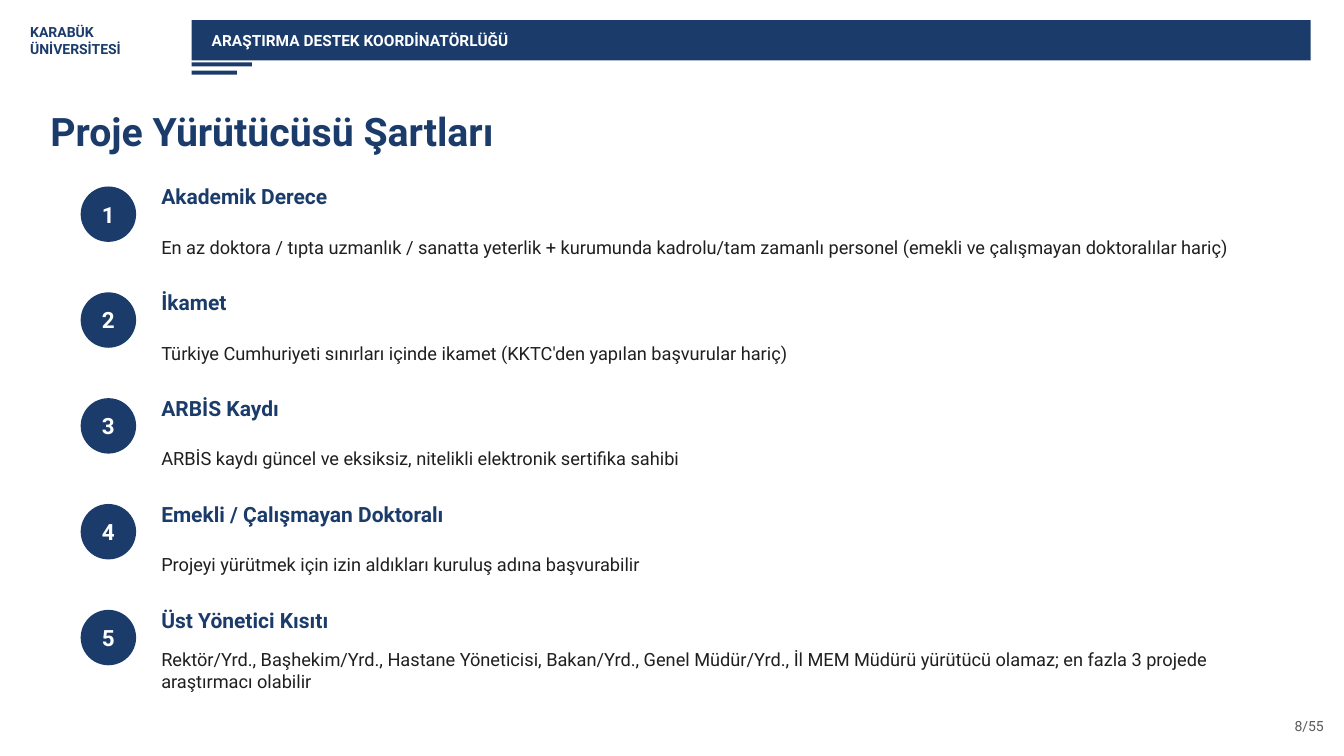
from pptx import Presentation
from pptx.dml.color import RGBColor
from pptx.enum.shapes import MSO_SHAPE
from pptx.enum.text import MSO_ANCHOR, MSO_AUTO_SIZE, PP_ALIGN
from pptx.util import Inches, Pt

FONT = "Roboto"
NAVY, WHITE, INK, GRAY = "1B3C6B", "FFFFFF", "1F1F1F", "595959"

CONDITIONS = [
    ("Akademik Derece",
     "En az doktora / tıpta uzmanlık / sanatta yeterlik + kurumunda kadrolu/tam zamanlı "
     "personel (emekli ve çalışmayan doktoralılar hariç)"),
    ("İkamet",
     "Türkiye Cumhuriyeti sınırları içinde ikamet (KKTC'den yapılan başvurular hariç)"),
    ("ARBİS Kaydı",
     "ARBİS kaydı güncel ve eksiksiz, nitelikli elektronik sertifika sahibi"),
    ("Emekli / Çalışmayan Doktoralı",
     "Projeyi yürütmek için izin aldıkları kuruluş adına başvurabilir"),
    ("Üst Yönetici Kısıtı",
     "Rektör/Yrd., Başhekim/Yrd., Hastane Yöneticisi, Bakan/Yrd., Genel Müdür/Yrd., "
     "İl MEM Müdürü yürütücü olamaz; en fazla 3 projede araştırmacı olabilir"),
]


def rgb(color):
    return RGBColor.from_string(color)


def write(sp, lines, size, color, bold=False, align=PP_ALIGN.LEFT, indent=0):
    """Fill a shape with vertically centred paragraphs, one per line."""
    tf = sp.text_frame
    tf.word_wrap = True
    tf.auto_size = MSO_AUTO_SIZE.NONE
    tf.vertical_anchor = MSO_ANCHOR.MIDDLE
    tf.margin_left = Inches(indent)
    tf.margin_top = tf.margin_right = tf.margin_bottom = 0
    for i, line in enumerate(lines):
        p = tf.paragraphs[0] if i == 0 else tf.add_paragraph()
        p.text = line
        p.alignment = align
        p.font.name = FONT
        p.font.size = Pt(size)
        p.font.bold = bold
        p.font.color.rgb = rgb(color)


def add_text(slide, x, y, w, h, lines, size, color, **style):
    sp = slide.shapes.add_textbox(Inches(x), Inches(y), Inches(w), Inches(h))
    write(sp, lines, size, color, **style)


def add_block(slide, kind, x, y, w, h):
    sp = slide.shapes.add_shape(kind, Inches(x), Inches(y), Inches(w), Inches(h))
    sp.shadow.inherit = False
    sp.fill.solid()
    sp.fill.fore_color.rgb = rgb(NAVY)
    sp.line.fill.background()
    return sp


def add_header(slide, x, y, w):
    add_text(slide, x, y, 1.5, 0.5, ["KARABÜK", "ÜNİVERSİTESİ"], 10, NAVY, bold=True)
    bar_x, bar_y = x + 1.6, y + 0.05
    banner = add_block(slide, MSO_SHAPE.RECTANGLE, bar_x, bar_y, w - 1.6, 0.4)
    write(banner, ["ARAŞTIRMA DESTEK KOORDİNATÖRLÜĞÜ"], 11, WHITE, bold=True, indent=0.2)
    for drop, length in ((0.42, 0.6), (0.5, 0.45)):
        add_block(slide, MSO_SHAPE.RECTANGLE, bar_x, bar_y + drop, length, 0.04)


def set_title(slide, x, y, w, h, text):
    title = slide.shapes.title
    title.left, title.top = Inches(x), Inches(y)
    title.width, title.height = Inches(w), Inches(h)
    write(title, [text], 28, NAVY, bold=True)


def add_condition(slide, x, y, w, number, heading, detail):
    badge = add_block(slide, MSO_SHAPE.OVAL, x, y + 0.1, 0.55, 0.55)
    write(badge, [str(number)], 16, WHITE, bold=True, align=PP_ALIGN.CENTER)
    text_x, text_w = x + 0.8, w - 0.8
    add_text(slide, text_x, y, text_w, 0.4, [heading], 15, NAVY, bold=True)
    add_text(slide, text_x, y + 0.4, text_w, 0.6, [detail], 13, INK)


def add_conditions(slide, x, y, w, pitch):
    for i, (heading, detail) in enumerate(CONDITIONS):
        add_condition(slide, x, y + i * pitch, w, i + 1, heading, detail)


def main():
    prs = Presentation()
    prs.slide_width, prs.slide_height = Inches(13.33), Inches(7.5)
    slide = prs.slides.add_slide(prs.slide_layouts[5])
    add_header(slide, 0.3, 0.15, 12.7)
    set_title(slide, 0.5, 0.95, 12.3, 0.7, "Proje Yürütücüsü Şartları")
    add_conditions(slide, 0.8, 1.75, 11.8, 1.05)
    add_text(slide, 12.13, 7.05, 1, 0.3, ["8/55"], 10, GRAY, align=PP_ALIGN.RIGHT)
    prs.save("out.pptx")


if __name__ == "__main__":
    main()
